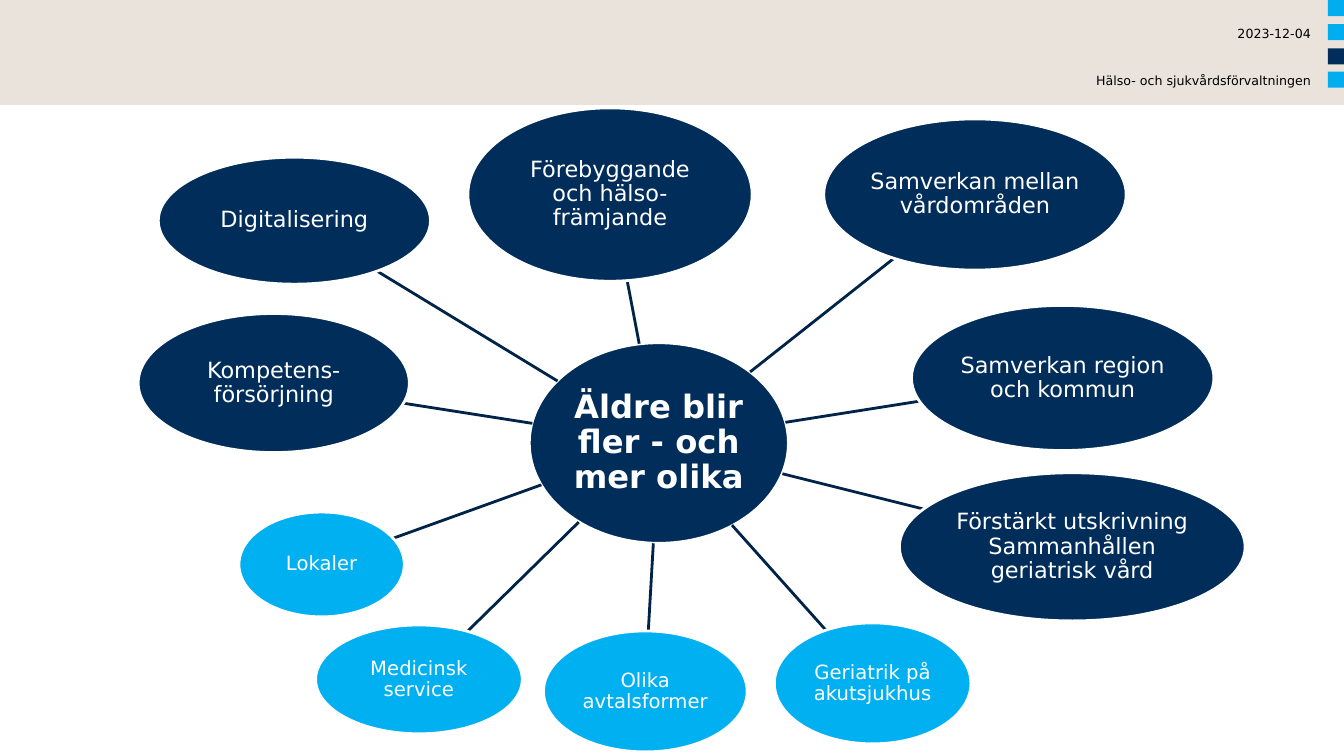
from math import hypot

from lxml import etree
from pptx import Presentation
from pptx.dml.color import RGBColor
from pptx.enum.shapes import MSO_CONNECTOR, MSO_SHAPE
from pptx.enum.text import MSO_ANCHOR, PP_ALIGN
from pptx.oxml.ns import qn
from pptx.util import Pt

RECTANGLE, OVAL = MSO_SHAPE.RECTANGLE, MSO_SHAPE.OVAL
STRAIGHT = MSO_CONNECTOR.STRAIGHT
MIDDLE = MSO_ANCHOR.MIDDLE
CENTER, RIGHT = PP_ALIGN.CENTER, PP_ALIGN.RIGHT

PX = 9144  # 100 px to the inch
WIDTH, HEIGHT = 1333, 750
FONT = "DejaVu Sans"
COLORS = {
    "band": "E9E3DC",
    "navy": "002D5A",
    "spoke": "002448",
    "cyan": "00AEEF",
    "sky": "00B0F0",
    "white": "FFFFFF",
    "black": "000000",
}

# Ellipses: text, (left, top, width, height), fill, text size
HUB = ("Äldre blir fler - och mer olika", (525, 340, 257, 199), "navy", 23)
TOPICS = [
    ("Förebyggande och hälso-främjande", (464, 107, 282, 172), "navy", 16),
    ("Samverkan mellan vårdområden", (817, 118, 300, 150), "navy", 16),
    ("Samverkan region och kommun", (904, 303, 300, 144), "navy", 16),
    ("Geriatrik på akutsjukhus", (768, 618, 195, 120), "sky", 14),
    ("Förstärkt utskrivning Sammanhållen geriatrisk vård",
     (892, 469, 343, 147), "navy", 16),
    ("Olika avtalsformer", (539, 626, 202, 120), "sky", 14),
    ("Medicinsk service", (313, 620, 205, 108), "sky", 14),
    ("Lokaler", (237, 508, 164, 104), "sky", 14),
    ("Kompetens-försörjning", (137, 311, 269, 138), "navy", 16),
    ("Digitalisering", (157, 156, 270, 126), "navy", 16),
]


def px(*lengths):
    return [length * PX for length in lengths]


def color(name):
    return RGBColor.from_string(COLORS[name])


def add_filled(slide, kind, box, fill):
    shape = slide.shapes.add_shape(kind, *px(*box))
    shape.shadow.inherit = False
    shape.fill.solid()
    shape.fill.fore_color.rgb = color(fill)
    shape.line.fill.background()
    return shape


def write(shape, text, size, ink, align, inset=0):
    frame = shape.text_frame
    frame.word_wrap = True
    frame.margin_left = frame.margin_right = inset * PX
    frame.margin_top = frame.margin_bottom = inset * PX
    paragraph = frame.paragraphs[0]
    paragraph.text = text
    paragraph.alignment = align
    paragraph.font.name = FONT
    paragraph.font.size = Pt(size)
    paragraph.font.color.rgb = color(ink)
    return paragraph


def add_header_text(slide, text, top):
    box = slide.shapes.add_textbox(*px(933, top, 367, 14))
    write(box, text, 9, "black", RIGHT)


def add_ellipse(slide, text, box, fill, size, bold=False):
    ellipse = add_filled(slide, OVAL, box, fill)
    ellipse.line.color.rgb = color("white")
    ellipse.line.width = Pt(2)
    ellipse.text_frame.vertical_anchor = MIDDLE
    paragraph = write(ellipse, text, size, "white", CENTER, inset=1)
    paragraph.line_spacing = 0.9
    paragraph.font.bold = bold


def center(box):
    left, top, width, height = box
    return left + width / 2, top + height / 2


def rim_point(box, target):
    """Point on the ellipse's rim in the direction of the target."""
    x, y = center(box)
    dx, dy = target[0] - x, target[1] - y
    reach = 1 / hypot(dx / (box[2] / 2), dy / (box[3] / 2))
    return round(x + dx * reach), round(y + dy * reach)


def add_spoke(slide, hub_box, topic_box):
    start = rim_point(hub_box, center(topic_box))
    end = rim_point(topic_box, center(hub_box))
    spoke = slide.shapes.add_connector(STRAIGHT, *px(*start, *end))
    spoke.line.color.rgb = color("spoke")
    spoke.line.width = Pt(2)
    etree.SubElement(spoke._element.spPr, qn("a:effectLst"))


def main():
    deck = Presentation()
    deck.slide_width, deck.slide_height = px(WIDTH, HEIGHT)
    slide = deck.slides.add_slide(deck.slide_layouts[6])

    # Header band with corner squares
    add_filled(slide, RECTANGLE, (0, 0, WIDTH, 104), "band")
    for row, fill in enumerate(["cyan", "cyan", "navy", "cyan"]):
        add_filled(slide, RECTANGLE, (1317, round(row * 23.8), 16, 16), fill)
    add_header_text(slide, "2023-12-04", 26)
    add_header_text(slide, "Hälso- och sjukvårdsförvaltningen", 72)

    # Hub with its topics
    add_ellipse(slide, *HUB, bold=True)
    for topic in TOPICS:
        add_spoke(slide, HUB[1], topic[1])
        add_ellipse(slide, *topic)

    deck.save("out.pptx")


if __name__ == "__main__":
    main()
